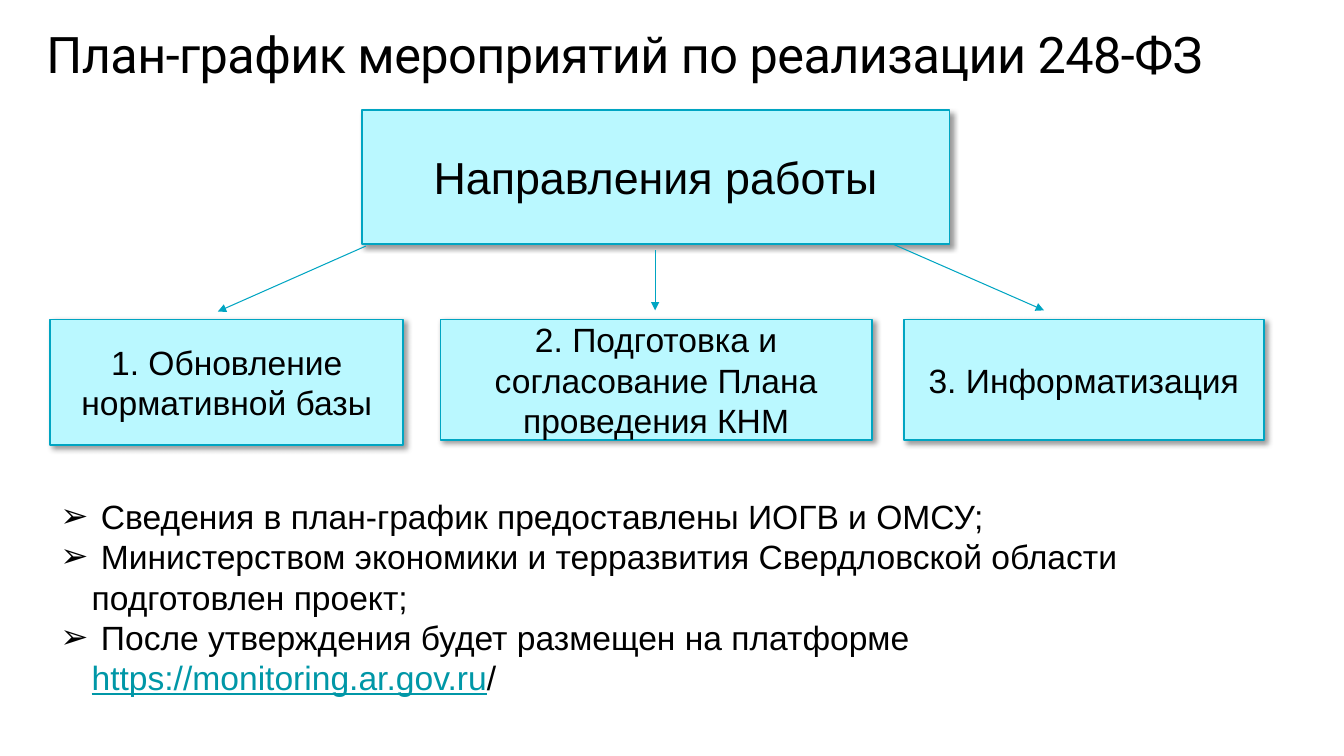
"""Build the slide with the plan of measures and its three work directions."""
from dataclasses import dataclass
from typing import Any

from lxml import etree
from pptx import Presentation
from pptx import util as u
from pptx.dml import color
from pptx.enum import shapes, text
from pptx.oxml import ns

COLOURS = {"text": "000000", "fill": "BAF8FF", "line": "00A5C2", "link": "0097A7"}


@dataclass(frozen=True)
class Block:
    """A shadowed box with centred text, measured in centimetres."""
    wording: str
    left: float
    top: float
    width: float
    height: float
    size: int = 24


@dataclass(frozen=True)
class Arrow:
    """An arrow between two points, measured in centimetres."""
    start: tuple[float, float]
    end: tuple[float, float]


BLOCKS = (
    Block("Направления работы", 9.12, 2.77, 14.81, 3.38, 32),
    Block("1. Обновление нормативной базы", 1.27, 8.05, 8.89, 3.17),
    Block("2. Подготовка и согласование Плана проведения КНМ", 11.1, 8.05, 10.87, 3.03),
    Block("3. Информатизация", 22.78, 8.05, 9.07, 3.04),
)
ARROWS = (
    Arrow((9.22, 6.2), (5.49, 7.85)),
    Arrow((16.51, 6.3), (16.51, 7.82)),
    Arrow((22.5, 6.15), (26.31, 7.82)),
)
NOTES = (
    ((" Сведения в план-график предоставлены ИОГВ и ОМСУ;", "text"),),
    ((" Министерством экономики и терразвития Свердловской области подготовлен проект;", "text"),),
    ((" После утверждения будет размещен на платформе ", "text"),
     ("https://monitoring.ar.gov.ru", "link"), ("/", "text")),
)


def apply(target: Any, **values: Any) -> None:
    """Set every given attribute on the target."""
    for name, value in values.items():
        setattr(target, name, value)


def add_tag(parent: Any, tag: str, **values: Any) -> Any:
    """Append a drawing element with the given attributes."""
    return etree.SubElement(parent, ns.qn(f"a:{tag}"), {k: str(v) for k, v in values.items()})


def rgb(name: str) -> color.RGBColor:
    """Return a named colour."""
    return color.RGBColor.from_string(COLOURS[name])


def add_span(para: Any, wording: str, size: int, tone: str = "text", font: str = "Arial") -> Any:
    """Add a formatted run to a paragraph."""
    span = para.add_run()
    span.text = wording
    apply(span.font, size=u.Pt(size), name=font, underline=tone == "link")
    span.font.color.rgb = rgb(tone)
    return span


def draw_line(line: Any, width: float) -> None:
    """Give an outline the accent colour and a width."""
    line.color.rgb = rgb("line")
    line.width = u.Pt(width)


def draw_title(page: Any) -> None:
    """Place and format the slide title."""
    box = page.shapes.title
    apply(box, left=u.Cm(1.09), top=u.Cm(-0.2), width=u.Cm(33.87), height=u.Cm(3.38))
    frame = box.text_frame
    margins = {f"margin_{side}": u.Cm(0.08) for side in ("left", "right", "top", "bottom")}
    apply(frame, word_wrap=True, auto_size=text.MSO_AUTO_SIZE.NONE,
          vertical_anchor=text.MSO_ANCHOR.MIDDLE, **margins)
    para = frame.paragraphs[0]
    apply(para, alignment=text.PP_ALIGN.LEFT, line_spacing=0.8, space_before=u.Pt(21))
    span = add_span(para, "План-график мероприятий по реализации 248-ФЗ", 36, font="Roboto")
    span._r.get_or_add_rPr().set("spc", "-40")


def draw_block(page: Any, block: Block) -> None:
    """Draw one box with its shadow and text."""
    box = page.shapes.add_shape(shapes.MSO_SHAPE.RECTANGLE, u.Cm(block.left), u.Cm(block.top),
                                u.Cm(block.width), u.Cm(block.height))
    box.fill.solid()
    box.fill.fore_color.rgb = rgb("fill")
    draw_line(box.line, 1.25)
    box.shadow.inherit = False
    effects = box._element.spPr.find(ns.qn("a:effectLst"))
    shadow = add_tag(effects, "outerShdw", blurRad=u.Pt(4), dist=u.Pt(3),
                     dir=45 * 60000, algn="tl", rotWithShape=0)
    add_tag(add_tag(shadow, "srgbClr", val=COLOURS["text"]), "alpha", val=40000)
    apply(box.text_frame, word_wrap=True, vertical_anchor=text.MSO_ANCHOR.MIDDLE)
    para = box.text_frame.paragraphs[0]
    para.alignment = text.PP_ALIGN.CENTER
    add_span(para, block.wording, block.size)


def draw_arrow(page: Any, arrow: Arrow) -> None:
    """Draw one arrow without a shadow."""
    points = (u.Cm(value) for value in arrow.start + arrow.end)
    connector = page.shapes.add_connector(shapes.MSO_CONNECTOR.STRAIGHT, *points)
    draw_line(connector.line, 0.75)
    properties = connector._element.spPr
    add_tag(properties.find(ns.qn("a:ln")), "tailEnd", type="triangle")
    add_tag(properties, "effectLst")


def draw_notes(page: Any) -> None:
    """Draw the bulleted notes."""
    box = page.shapes.add_textbox(u.Cm(1.27), u.Cm(12.37), u.Cm(31.01), u.Cm(5.38))
    frame = box.text_frame
    apply(frame, word_wrap=True, auto_size=text.MSO_AUTO_SIZE.SHAPE_TO_FIT_TEXT)
    for number, note in enumerate(NOTES):
        para = frame.add_paragraph() if number else frame.paragraphs[0]
        properties = para._p.get_or_add_pPr()
        indent = u.Cm(0.79)
        properties.set("marL", str(indent))
        properties.set("indent", str(-indent))
        add_tag(properties, "buFont", typeface="Arial")
        add_tag(properties, "buChar", char="➢")
        for wording, tone in note:
            add_span(para, wording, 24, tone)


def main() -> None:
    """Build and save the deck."""
    deck = Presentation()
    apply(deck, slide_width=u.Cm(33.87), slide_height=u.Cm(19.05))
    page = deck.slides.add_slide(deck.slide_layouts.get_by_name("Title Only"))
    draw_title(page)
    for block in BLOCKS:
        draw_block(page, block)
    for arrow in ARROWS:
        draw_arrow(page, arrow)
    draw_notes(page)
    deck.save("out.pptx")


if __name__ == "__main__":
    main()
